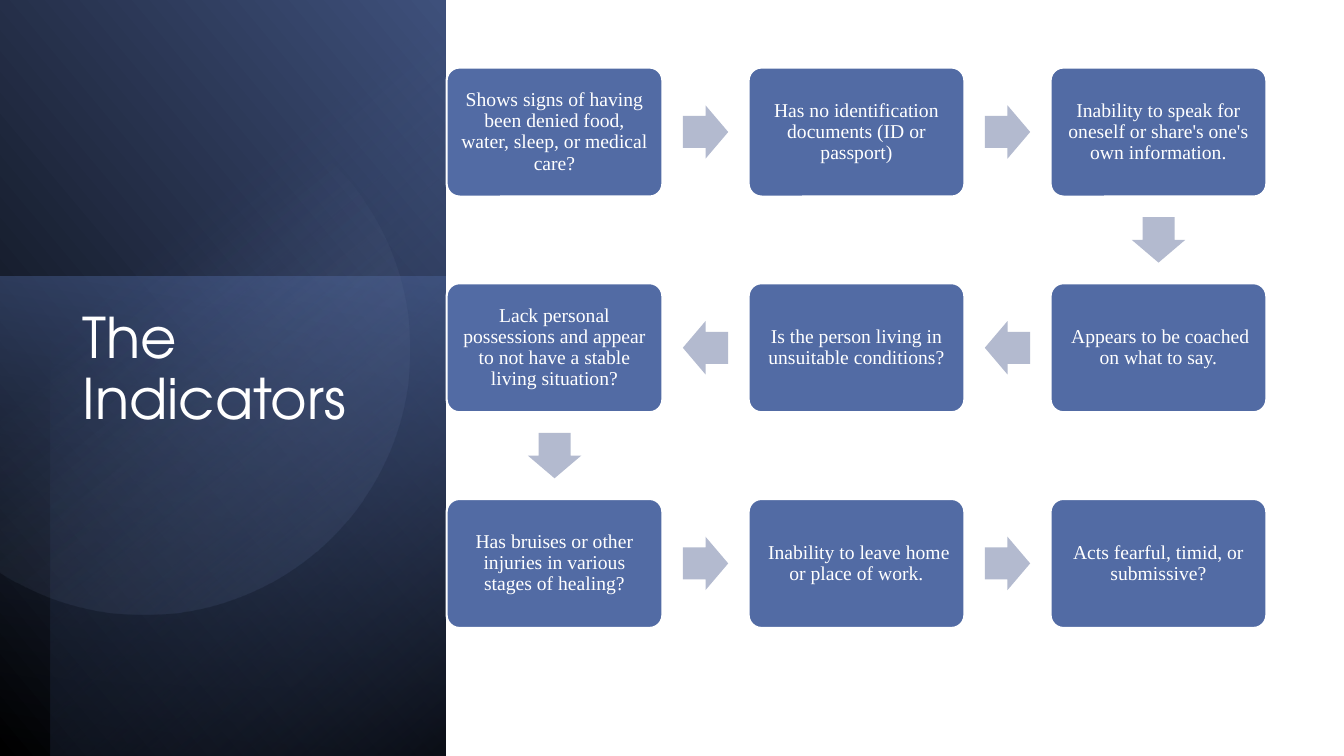
import math

from pptx import Presentation
from pptx.dml.color import RGBColor
from pptx.enum.shapes import MSO_SHAPE
from pptx.enum.text import MSO_ANCHOR, MSO_AUTO_SIZE, PP_ALIGN
from pptx.oxml import parse_xml
from pptx.oxml.ns import nsdecls, qn
from pptx.util import Inches, Pt

RECT = MSO_SHAPE.RECTANGLE
CARD = MSO_SHAPE.ROUNDED_RECTANGLE
ARROW = MSO_SHAPE.RIGHT_ARROW
TOP, MIDDLE = MSO_ANCHOR.TOP, MSO_ANCHOR.MIDDLE
NO_FIT = MSO_AUTO_SIZE.NONE
LEFT, CENTER = PP_ALIGN.LEFT, PP_ALIGN.CENTER

COLORS = {
    "black": "000000", "navy": "293652", "deep": "3E507B",
    "blue": "526BA4", "pale": "95A5CA", "arrow": "B3BACF", "white": "FFFFFF",
}
TITLE_FONT = "TeX Gyre Adventor"
BODY_FONT = "Times New Roman"

INDICATORS = [
    "Shows signs of having been denied food, water, sleep, or medical care?",
    "Has no identification documents (ID or passport)",
    "Inability to speak for oneself or share's one's own information.",
    " Appears to be coached on what to say.",
    "Is the person living in unsuitable conditions?",
    "Lack personal possessions and appear to not have a stable living situation?",
    "Has bruises or other injuries in various stages of healing?",
    " Inability to leave home or place of work.",
    "Acts fearful, timid, or submissive?",
]


def rgb(name):
    return RGBColor.from_string(COLORS[name])


def fill_gradient(s, angle, stops):
    """Fill with (position, colour, opacity) stops, all in percent."""
    gs = "".join(
        f'<a:gs pos="{pos * 1000}"><a:srgbClr val="{COLORS[color]}">'
        f'<a:alpha val="{opacity * 1000}"/></a:srgbClr></a:gs>'
        for pos, color, opacity in stops)
    s.shadow.inherit = False
    s.line.fill.background()
    s.fill.background()
    sp_pr = s._element.spPr
    sp_pr.replace(sp_pr.find(qn("a:noFill")), parse_xml(
        f'<a:gradFill rotWithShape="1" {nsdecls("a")}><a:gsLst>{gs}</a:gsLst>'
        f'<a:lin ang="{angle * 60000}" scaled="0"/></a:gradFill>'))


def add_text(tf, text, font, size, align, anchor):
    tf.word_wrap = True
    tf.auto_size = NO_FIT
    tf.vertical_anchor = anchor
    p = tf.paragraphs[0]
    p.text = text
    p.alignment = align
    p.line_spacing = 0.9
    p.font.name = font
    p.font.size = Pt(size)
    p.font.color.rgb = rgb("white")


def add_panel(slide, x, y, w, h):
    # Layered gradients: left, top, width, height, rotation, flip, angle, stops
    layers = [
        (-1.55, 1.55, 7.52, 4.42, 90, True, 310,
         [(0, "black", 100), (100, "deep", 100)]),
        (-0.17, 2.91, 4.76, 4.42, 270, False, 190,
         [(0, "blue", 50), (100, "navy", 0)]),
        (-1.29, 1.79, 7.5, 3.92, 270, True, 220,
         [(0, "black", 59), (69, "blue", 0)]),
    ]
    for left, top, width, height, rotation, flip, angle, stops in layers:
        s = slide.shapes.add_shape(RECT, Inches(x + left), Inches(y + top),
                                   Inches(width), Inches(height))
        s.rotation = rotation
        if flip:
            s._element.spPr.find(qn("a:xfrm")).set("flipH", "1")
        fill_gradient(s, angle, stops)

    # Circle cut off by the left edge of the panel
    cx, cy, radius = 1.43, 3.47, 2.63
    sweep = math.acos(-cx / radius)
    steps = 120
    angles = [sweep * (2 * i / steps - 1) for i in range(steps + 1)]
    points = [(Inches(x + cx + radius * math.cos(a)),
               Inches(y + cy + radius * math.sin(a))) for a in angles]
    builder = slide.shapes.build_freeform(*points[0])
    builder.add_line_segments(points[1:], close=True)
    fill_gradient(builder.convert_to_shape(), 52,
                  [(39, "pale", 0), (100, "deep", 26)])

    # Title, brought in front of the panel
    title = slide.shapes.title
    slide.shapes._spTree.append(title._element)
    title.left, title.top = Inches(x + 0.72), Inches(y + 3.03)
    title.width, title.height = Inches(w - 1.27), Inches(h - 4.14)
    add_text(title.text_frame, "The Indicators", TITLE_FONT, 40, LEFT, TOP)


def add_card(slide, text, x, y, w, h):
    s = slide.shapes.add_shape(CARD, Inches(x), Inches(y), Inches(w), Inches(h))
    s.adjustments[0] = 0.1
    s.shadow.inherit = False
    s.fill.solid()
    s.fill.fore_color.rgb = rgb("blue")
    s.line.color.rgb = rgb("white")
    s.line.width = Pt(1.5)
    tf = s.text_frame
    tf.margin_left = tf.margin_right = Inches(0.1)
    tf.margin_top = tf.margin_bottom = Inches(0.1)
    add_text(tf, text, BODY_FONT, 14, CENTER, MIDDLE)


def add_arrow(slide, start, end):
    """Place an arrow halfway between two card centres."""
    w, h = 0.45, 0.53
    cx, cy = (start[0] + end[0]) / 2, (start[1] + end[1]) / 2
    s = slide.shapes.add_shape(ARROW, Inches(cx - w / 2), Inches(cy - h / 2),
                               Inches(w), Inches(h))
    s.adjustments[0], s.adjustments[1] = 0.6, 0.5
    s.rotation = math.degrees(math.atan2(end[1] - start[1], end[0] - start[0]))
    s.shadow.inherit = False
    s.fill.solid()
    s.fill.fore_color.rgb = rgb("arrow")
    s.line.fill.background()


def add_flow(slide, x, y, w, h):
    # Rows run alternately rightwards and leftwards
    columns, rows = 3, 3
    card_w, card_h = 2.14, 1.28
    step_x = (w - card_w) / (columns - 1)
    step_y = (h - card_h) / (rows - 1)
    previous = None
    for i, text in enumerate(INDICATORS):
        row, column = divmod(i, columns)
        if row % 2:
            column = columns - 1 - column
        left, top = x + column * step_x, y + row * step_y
        center = (left + card_w / 2, top + card_h / 2)
        if previous:
            add_arrow(slide, previous, center)
        add_card(slide, text, left, top, card_w, card_h)
        previous = center


def main():
    prs = Presentation()
    prs.slide_width, prs.slide_height = Inches(13.33), Inches(7.5)
    slide = prs.slides.add_slide(prs.slide_layouts[5])
    add_panel(slide, 0, 0, 4.42, 7.5)
    add_flow(slide, 4.43, 0.67, 8.13, 5.56)
    prs.save("out.pptx")


if __name__ == "__main__":
    main()
